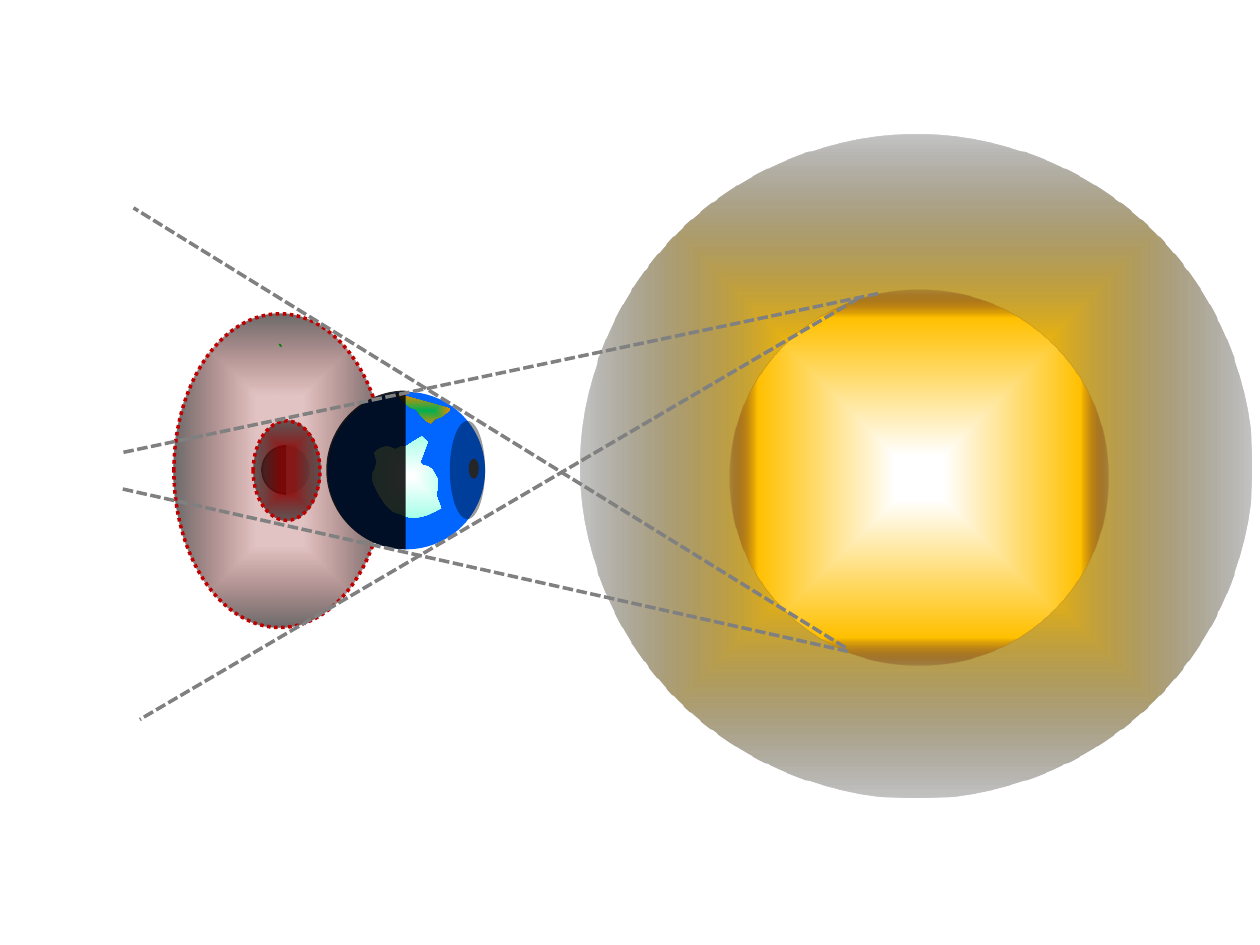
from math import cos, pi, radians, sin

from lxml import etree
from pptx import Presentation
from pptx.dml.color import RGBColor
from pptx.enum.dml import MSO_LINE
from pptx.enum.shapes import MSO_CONNECTOR, MSO_SHAPE
from pptx.oxml.ns import qn
from pptx.util import Inches, Pt

OVAL, LINE = MSO_SHAPE.OVAL, MSO_CONNECTOR.STRAIGHT
DOT, DASH = MSO_LINE.ROUND_DOT, MSO_LINE.SQUARE_DOT
LEFT, RIGHT = -1, 1
WIDE, HIGH = 10, 7.5

# A fill lists (stop %, colour, opacity %); a single stop makes a flat fill.
FILLS = {
    "penumbra": [(22, "820000", 23), (100, "262626", 68), (100, "4D0808", 17)],
    "umbra": [(22, "820000", 85), (100, "262626", 68), (100, "4D0808", 17)],
    "glow": [(7, "FFFFFF", 100), (32, "FFC000", 100), (100, "000000", 23)],
    "sun": [(12, "FFFFFF", 100), (85, "FFC000", 100), (100, "4D0808", 17)],
    "sea": [(0, "0066FF", 100)],
    "land": [(0, "00B050", 100), (100, "EE8800", 100), (100, "DEF9EC", 100)],
    "ice": [(3, "FFFFFF", 100), (100, "85FFE0", 100), (100, "DEF9EC", 100)],
    "isle": [(0, "008000", 100)],
    "night": [(0, "000000", 85)],
    "shade": [(0, "000000", 39)],
    "spot": [(0, "262626", 100)],
    "moon day": [(0, "A6A6A6", 100)],
    "moon night": [(0, "404040", 100)],
}
# A line is (colour, points, dash).
LINES = {
    "rim": ("C00000", 2, DOT),
    "ray": ("808080", 2, DASH),
    "day edge": ("A6A6A6", 1, None),
    "night edge": ("262626", 1, None),
}

# Ovals: fill, (left, top, width, height), line; the fill names the part.
BODIES = [
    ("penumbra", (1.38, 2.49, 1.68, 2.49), "rim"),
    ("glow", (4.61, 1.07, 5.32, 5.26), None),
    ("sun", (5.79, 2.3, 3.01, 2.98), None),
    ("sea", (2.6, 3.11, 1.25, 1.25), None),
]
MOON_SHADOW = [
    ("shade", (3.57, 3.34, 0.28, 0.78), None),
    ("spot", (3.72, 3.64, 0.08, 0.16), None),
]
UMBRA = [("umbra", (2.01, 3.34, 0.53, 0.79), "rim")]

# The land hangs from a straight north shore, as deep as listed at equal steps.
SHORE = (3.16, 3.15), (3.59, 3.27)
DEPTHS = [0, 0.03, 0.06, 0.08, 0.08, 0.12, 0.15, 0.16, 0.11, 0.09, 0.05, 0.01]
LAND_TURN, LAND_MID = 195.3, (3.35, 3.27)

# The ice cap reaches as far from its pole as listed, clockwise from the east.
POLE = (3.22, 3.8)
REACH = [
    0.25, 0.25, 0.26, 0.28, 0.36, 0.34, 0.33, 0.32, 0.31,  # south-east
    0.3, 0.28, 0.28, 0.27, 0.26, 0.25, 0.25, 0.25, 0.26,  # south-west
    0.27, 0.27, 0.26, 0.27, 0.33, 0.32, 0.3, 0.25, 0.26,  # north-west
    0.26, 0.3, 0.36, 0.34, 0.17, 0.17, 0.2, 0.22, 0.23,  # north-east
]
ICE_TURN, ICE_MID = 33.7, (3.26, 3.77)

ISLES = [
    [(2.22, 2.73), (2.22, 2.75), (2.24, 2.75)],
    [(2.21, 2.73), (2.23, 2.75), (2.23, 2.73)],
]

# Half discs: fill, centre, radius, side, line
NIGHT = ("night", (3.22, 3.73), 0.63, LEFT, None)
MOON = [
    ("moon day", (2.26, 3.73), 0.19, RIGHT, "day edge"),
    ("moon night", (2.27, 3.73), 0.19, LEFT, "night edge"),
]

# Rays: from the edge of the sun to the far side of the shadow
RAYS = [
    ((6.81, 2.37), (1.11, 5.71)),
    ((6.71, 5.14), (1.06, 1.65)),
    ((6.73, 5.17), (0.97, 3.88)),
    ((6.97, 2.33), (0.98, 3.59)),
]


def tint(parent, color, alpha):
    node = etree.SubElement(parent, qn("a:srgbClr"), val=color)
    if alpha < 100:
        etree.SubElement(node, qn("a:alpha"), val=str(alpha * 1000))


def paint(shape, stops):
    """Give a shape a flat fill, or a gradient that runs out from its centre."""
    shape.fill.background()
    old = shape._element.spPr.find(qn("a:noFill"))
    if len(stops) == 1:
        new = etree.Element(qn("a:solidFill"))
        tint(new, *stops[0][1:])
    else:
        new = etree.Element(qn("a:gradFill"), rotWithShape="1")
        group = etree.SubElement(new, qn("a:gsLst"))
        for share, color, alpha in stops:
            stop = etree.SubElement(group, qn("a:gs"), pos=str(share * 1000))
            tint(stop, color, alpha)
        path = etree.SubElement(new, qn("a:path"), path="shape")
        etree.SubElement(path, qn("a:fillToRect"), dict.fromkeys("ltrb", "50000"))
    old.getparent().replace(old, new)


def stroke(line, name):
    if name is None:
        line.fill.background()
        return
    color, width, dash = LINES[name]
    line.color.rgb = RGBColor.from_string(color)
    line.width = Pt(width)
    if dash:
        line.dash_style = dash


def finish(shape, fill, line=None, turn=0):
    shape.shadow.inherit = False
    shape.rotation = turn
    paint(shape, FILLS[fill])
    stroke(shape.line, line)


def ovals(shapes, rows):
    for fill, box, line in rows:
        finish(shapes.add_shape(OVAL, *map(Inches, box)), fill, line)


def outline(shapes, points, close=True):
    dots = [(Inches(x), Inches(y)) for x, y in points]
    pen = shapes.build_freeform(*dots[0], scale=1.0)
    pen.add_line_segments(dots[1:], close=close)
    return pen.convert_to_shape()


def polar(mid, radius, angle):
    return mid[0] + radius * cos(angle), mid[1] + radius * sin(angle)


def hang(shore, depths):
    """Follow the points below a shore line, then close along the line."""
    (x1, y1), (x2, y2) = shore
    last = len(depths) - 1
    return [
        (x1 + (x2 - x1) * i / last, y1 + (y2 - y1) * i / last + depth)
        for i, depth in enumerate(depths)
    ] + [(x2, y2)]


def ring(mid, radii):
    step = 2 * pi / len(radii)
    return [polar(mid, radius, i * step) for i, radius in enumerate(radii)]


def unturn(points, angle, mid):
    """Turn points back, so that the turned shape lands on them."""
    c, s = cos(radians(angle)), sin(radians(angle))
    moves = [(x - mid[0], y - mid[1]) for x, y in points]
    return [(mid[0] + x * c + y * s, mid[1] - x * s + y * c) for x, y in moves]


def half(shapes, fill, mid, radius, side, line, steps=48):
    """Draw half a disc; the open arc leaves its straight side without a line."""
    angles = [side * pi * i / steps - pi / 2 for i in range(steps + 1)]
    arc = [polar(mid, radius, angle) for angle in angles]
    finish(outline(shapes, arc, close=False), fill, line)


def earth(shapes):
    lands = [
        ("land", hang(SHORE, DEPTHS), LAND_TURN, LAND_MID),
        ("ice", ring(POLE, REACH), ICE_TURN, ICE_MID),
    ]
    for fill, points, turn, mid in lands:
        finish(outline(shapes, unturn(points, turn, mid)), fill, turn=turn)
    for isle in ISLES:
        finish(outline(shapes, isle), "isle")
    half(shapes, *NIGHT)


def main():
    deck = Presentation()
    deck.slide_width, deck.slide_height = Inches(WIDE), Inches(HIGH)
    shapes = deck.slides.add_slide(deck.slide_layouts[6]).shapes
    ovals(shapes, BODIES)
    earth(shapes)
    ovals(shapes, MOON_SHADOW)
    for side in MOON:
        half(shapes, *side)
    ovals(shapes, UMBRA)
    for start, end in RAYS:
        ray = shapes.add_connector(LINE, *map(Inches, start + end))
        stroke(ray.line, "ray")
        etree.SubElement(ray._element.spPr, qn("a:effectLst"))
    deck.save("out.pptx")


if __name__ == "__main__":
    main()
